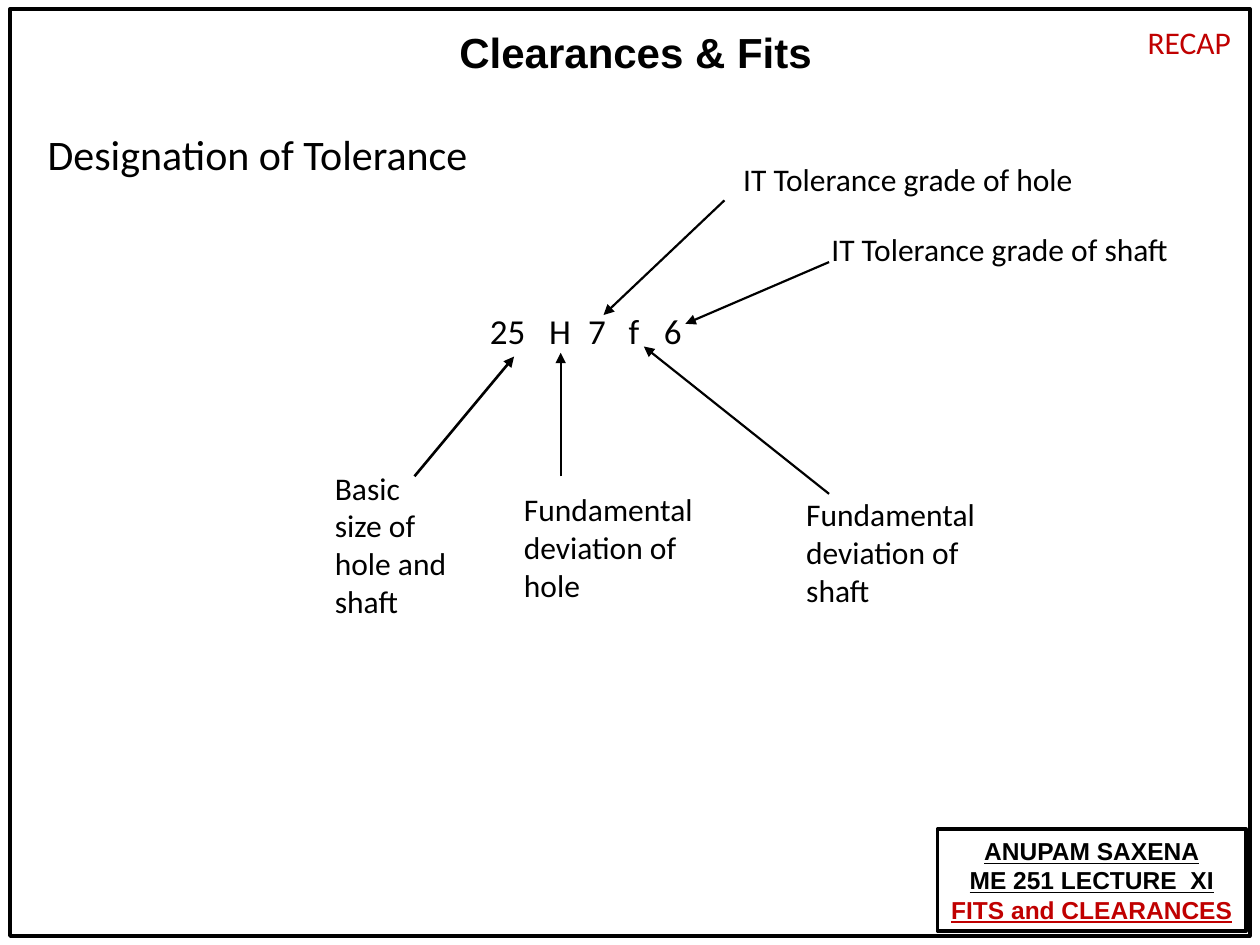
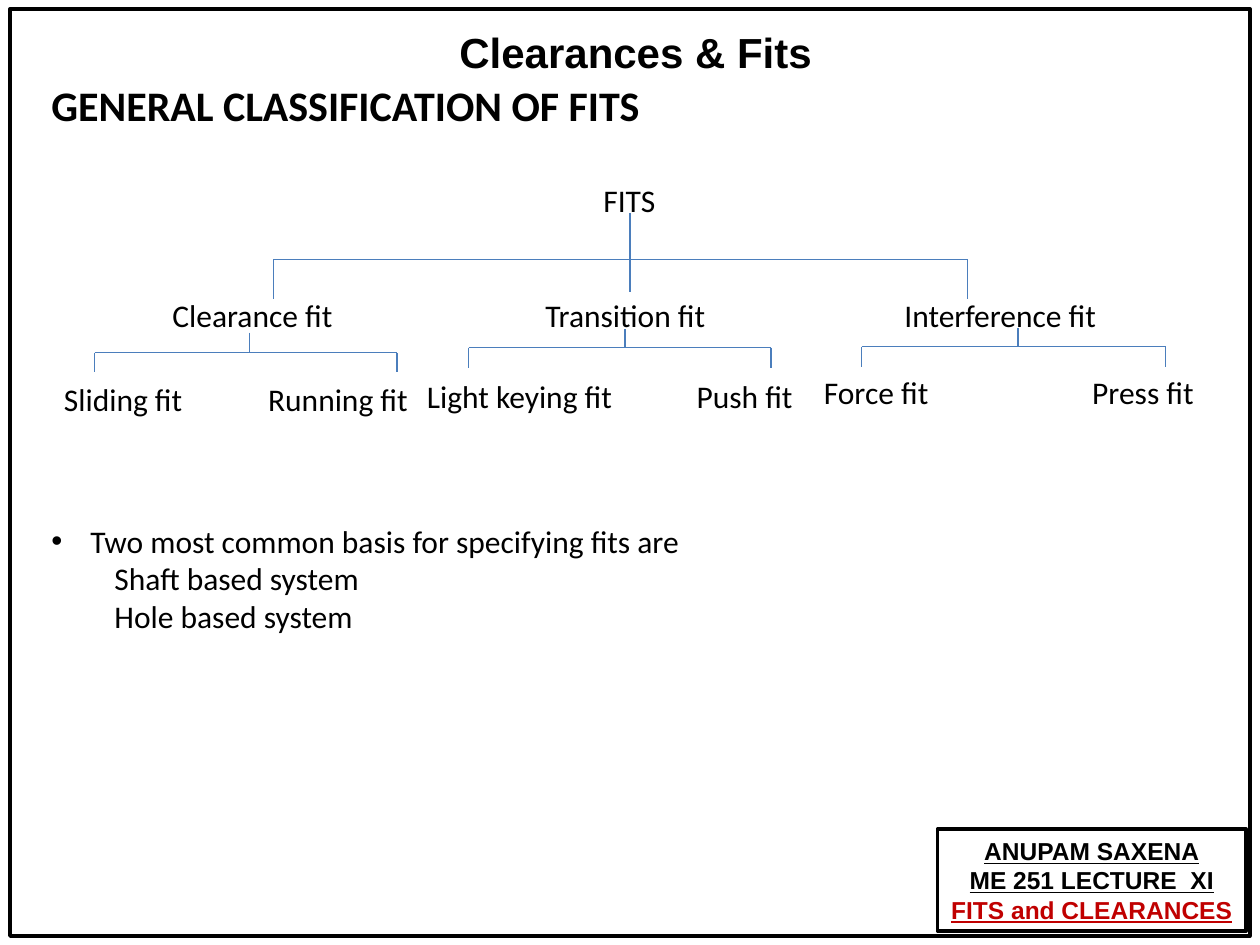
"""Build two lecture slides on the designation of tolerance and the classification of fits."""
from lxml import etree
from pptx import Presentation
from pptx import util as u
from pptx.dml.color import RGBColor
from pptx.enum import shapes, text
from pptx.oxml.ns import qn

COLORS = {"ink": "000000", "accent": "C00000", "tree": "4B7EBC"}
LEFT, CENTER = text.PP_ALIGN.LEFT, text.PP_ALIGN.CENTER


def write(sp, content, size=18, font="Calibri", color="ink", bold=False, underline=False,
          align=LEFT, wrap=True, tabs=(), last_color=None):
    tf = sp.text_frame
    tf.word_wrap = wrap
    lines = content.split("\n")
    for i, line in enumerate(lines):
        p = tf.add_paragraph() if i else tf.paragraphs[0]
        p.alignment = align
        r = p.add_run()
        r.text = line
        r.font.name, r.font.size = font, u.Pt(size)
        r.font.bold, r.font.underline = bold, underline
        name = last_color if last_color and i == len(lines) - 1 else color
        r.font.color.rgb = RGBColor.from_string(COLORS[name])
        if tabs:
            stops = etree.SubElement(p._p.get_or_add_pPr(), qn("a:tabLst"))
            for stop in tabs:
                etree.SubElement(stops, qn("a:tab"), pos=str(u.Inches(stop)), algn="l")
    return tf


def add_line(s, x1, y1, x2, y2, color="tree", width=0.75, arrow=False):
    ln = s.shapes.add_connector(shapes.MSO_CONNECTOR.STRAIGHT, *map(u.Inches, (x1, y1, x2, y2)))
    ln.line.color.rgb = RGBColor.from_string(COLORS[color])
    ln.line.width = u.Pt(width)
    if arrow:
        etree.SubElement(ln.line._get_or_add_ln(), qn("a:tailEnd"), type="triangle")
    etree.SubElement(ln._element.spPr, qn("a:effectLst"))


prs = Presentation()
prs.slide_width, prs.slide_height = u.Inches(10), u.Inches(7.5)

TITLE = ((3.53, 0.16, 3.03, 0.5), "Clearances & Fits",
         dict(size=24, font="Arial", bold=True, align=CENTER, wrap=False))
FOOTER = "ANUPAM SAXENA\nME 251 LECTURE  XI\nFITS and CLEARANCES"

tolerance_texts = [
    ((0.28, 0.97, 6.46, 0.5), "Designation of Tolerance", dict(size=24)),
    ((3.79, 2.41, 1.9, 0.44), "25\tH\t7\tf\t6", dict(size=20, tabs=(0.47, 0.78, 1.1, 1.38))),
    ((2.56, 3.67, 1.1, 1.31), "Basic size of hole and shaft", {}),
    ((4.06, 3.84, 1.65, 1.01), "Fundamental deviation of hole", {}),
    ((5.8, 1.22, 3.39, 0.4), "IT Tolerance grade of hole", {}),
    ((6.3, 3.88, 1.65, 1.01), "Fundamental deviation of shaft", {}),
    ((6.5, 1.78, 3.39, 0.4), "IT Tolerance grade of shaft", {}),
    ((9.01, 0.13, 0.87, 0.4), "RECAP", dict(color="accent", wrap=False)),
]
fits_texts = [
    ((0.31, 0.58, 4.91, 0.5), "GENERAL CLASSIFICATION OF FITS", dict(size=24, bold=True, wrap=False)),
    ((4.69, 1.39, 0.62, 0.4), "FITS", dict(wrap=False)),
    ((1.27, 2.3, 8.07, 0.4), "Clearance fit\tTransition fit\tInterference fit", dict(tabs=(2.96, 5.81))),
    ((0.41, 2.97, 2.97, 0.4), "Sliding fit\tRunning fit", dict(tabs=(1.62,))),
    ((3.29, 2.94, 3.16, 0.4), "Light keying fit\tPush fit", dict(tabs=(2.14,))),
    ((6.44, 2.91, 3.19, 0.4), "Force fit\tPress fit", dict(tabs=(2.13,))),
]

slides = []
for texts in (tolerance_texts, fits_texts):
    s = prs.slides.add_slide(prs.slide_layouts[6])
    slides.append(s)
    for box, content in (((0.08, 0.07, 9.84, 7.36), ""), ((7.44, 6.58, 2.45, 0.81), FOOTER)):
        sp = s.shapes.add_shape(shapes.MSO_SHAPE.RECTANGLE, *map(u.Inches, box))
        sp.shadow.inherit = False
        sp.fill.background()
        sp.line.color.rgb = RGBColor.from_string(COLORS["ink"])
        sp.line.width = u.Pt(2)
        if content:
            write(sp, content, size=14, font="Arial", bold=True, underline=True,
                  align=CENTER, wrap=False, last_color="accent")
    for box, content, fmt in [TITLE] + texts:
        write(s.shapes.add_textbox(*map(u.Inches, box)), content, **fmt)

tolerance, fits = slides

for x1, y1, x2, y2, width in [
    (3.29, 3.78, 4.08, 2.83, 1.5),
    (4.45, 3.78, 4.45, 2.8, 1.25),
    (5.75, 1.59, 4.79, 2.5, 1.25),
    (6.58, 3.92, 5.11, 2.75, 1.25),
    (6.58, 2.08, 5.44, 2.57, 1.25),
]:
    add_line(tolerance, x1, y1, x2, y2, "ink", width, arrow=True)

for stem, top, stem_end, bar, left, right, bottom in [
    (5, 1.69, 2.32, 2.06, 2.17, 7.68, 2.37),
    (1.98, 2.64, 2.8, 2.8, 0.75, 3.15, 2.95),
    (4.96, 2.61, 2.76, 2.76, 3.72, 6.12, 2.92),
    (8.08, 2.6, 2.75, 2.75, 6.84, 9.25, 2.91),
]:
    add_line(fits, stem, top, stem, stem_end)
    add_line(fits, left, bar, right, bar)
    for x in (left, right):
        add_line(fits, x, bar, x, bottom)

basis = fits.shapes.add_textbox(*map(u.Inches, (0.31, 4.09, 9.31, 1.01)))
tf = write(basis, "Two most common basis for specifying fits are\nShaft based system\nHole based system")
for i, p in enumerate(tf.paragraphs):
    pPr = p._p.get_or_add_pPr()
    if i:
        p.level = 1
        pPr.set("marL", str(u.Inches(0.5)))
        pPr.set("indent", "0")
    else:
        pPr.set("marL", str(u.Inches(0.31)))
        pPr.set("indent", str(-u.Inches(0.31)))
        etree.SubElement(pPr, qn("a:buFont"), typeface="Arial")
        etree.SubElement(pPr, qn("a:buChar"), char="•")

prs.save("out.pptx")
